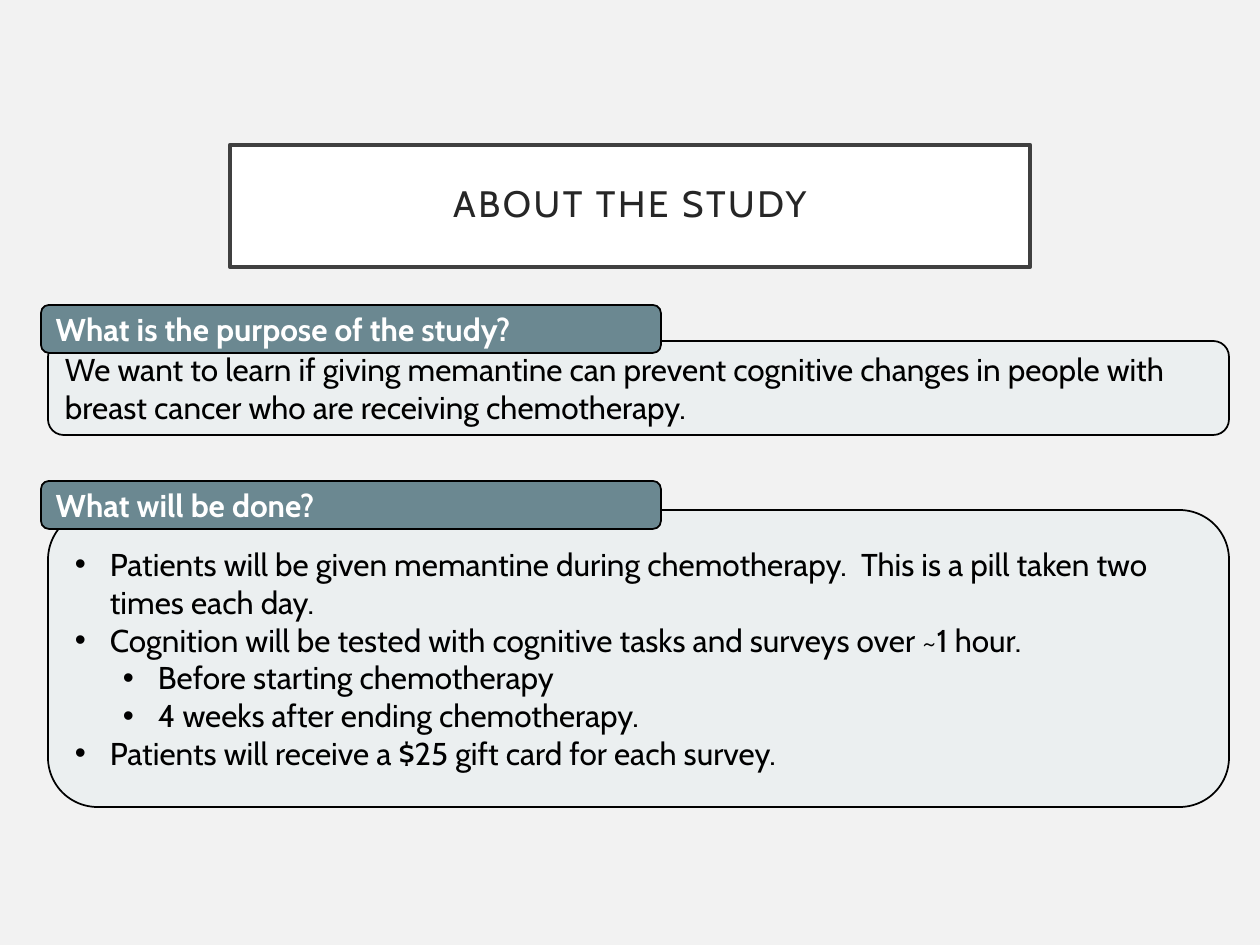
import dataclasses
import typing

import pptx
import pptx.dml.color
import pptx.enum.shapes
import pptx.enum.text
import pptx.oxml.ns
import pptx.util
from lxml import etree

PX = 914400 / 126  # EMU per px
FONT = "Cabin"
COLORS = {
    "background": "F2F2F2",
    "white": "FFFFFF",
    "title_border": "404040",
    "title_text": "262626",
    "heading": "6B8891",
    "panel": "EBEFF0",
    "black": "000000",
}
PANEL_LEFT, PANEL_WIDTH = 48, 1181
HEADING_LEFT, HEADING_WIDTH, HEADING_HEIGHT = 41, 620, 48
BULLET_HANG, LEVEL_STEP = 35, 48


@dataclasses.dataclass(frozen=True)
class Line:
    text: str
    level: typing.Optional[int] = None  # None means no bullet


@dataclasses.dataclass(frozen=True)
class Section:
    heading: str
    heading_top: int
    panel_top: int
    panel_height: int
    lines: tuple[Line, ...]


SECTIONS = (
    Section("What is the purpose of the study?", 305, 341, 94, (
        Line("We want to learn if giving memantine can prevent cognitive changes "
             "in people with breast cancer who are receiving chemotherapy."),
    )),
    Section("What will be done?", 481, 510, 297, (
        Line("Patients will be given memantine during chemotherapy.  "
             "This is a pill taken two times each day.", 0),
        Line("Cognition will be tested with cognitive tasks and surveys over ~1 hour.", 0),
        Line("Before starting chemotherapy", 1),
        Line("4 weeks after ending chemotherapy.", 1),
        Line("Patients will receive a $25 gift card for each survey.", 0),
    )),
)


def emu(px: float) -> int:
    return round(px * PX)


def rgb(name: str) -> pptx.dml.color.RGBColor:
    return pptx.dml.color.RGBColor.from_string(COLORS[name])


def add_box(slide, kind, left: int, top: int, width: int, height: int, *,
            fill: str, line: str = "black", line_width: float = 1):
    box = slide.shapes.add_shape(kind, emu(left), emu(top), emu(width), emu(height))
    box.shadow.inherit = False
    box.fill.solid()
    box.fill.fore_color.rgb = rgb(fill)
    box.line.color.rgb = rgb(line)
    box.line.width = pptx.util.Pt(line_width)
    return box


def add_bullet(paragraph, level: int) -> None:
    paragraph.level = level
    properties = paragraph._p.get_or_add_pPr()
    properties.set("marL", str(emu(BULLET_HANG + level * LEVEL_STEP)))
    properties.set("indent", str(-emu(BULLET_HANG)))
    for tag, key, value in (("a:buFont", "typeface", "Arial"), ("a:buChar", "char", "•")):
        etree.SubElement(properties, pptx.oxml.ns.qn(tag)).set(key, value)


def write_text(box, lines: typing.Sequence[Line], *, color: str, size: float = 18,
               bold: bool = False, align=pptx.enum.text.PP_ALIGN.LEFT,
               line_spacing: typing.Optional[float] = None,
               letter_spacing: float = 0, inset: typing.Optional[int] = None) -> None:
    frame = box.text_frame
    frame.word_wrap = True
    frame.vertical_anchor = pptx.enum.text.MSO_ANCHOR.MIDDLE
    if inset is not None:
        frame.margin_left = frame.margin_right = emu(inset)
        frame.margin_top = frame.margin_bottom = emu(inset)
    for index, line in enumerate(lines):
        paragraph = frame.add_paragraph() if index else frame.paragraphs[0]
        paragraph.alignment = align
        if line_spacing:
            paragraph.line_spacing = line_spacing
        if line.level is not None:
            add_bullet(paragraph, line.level)
        run = paragraph.add_run()
        run.text = line.text
        run.font.name = FONT
        run.font.size = pptx.util.Pt(size)
        run.font.bold = bold
        run.font.color.rgb = rgb(color)
        if letter_spacing:
            run._r.get_or_add_rPr().set("spc", str(round(letter_spacing * 100)))


def add_section(slide, section: Section) -> None:
    rounded = pptx.enum.shapes.MSO_SHAPE.ROUNDED_RECTANGLE
    panel = add_box(slide, rounded, PANEL_LEFT, section.panel_top,
                    PANEL_WIDTH, section.panel_height, fill="panel")
    write_text(panel, section.lines, color="black")
    heading = add_box(slide, rounded, HEADING_LEFT, section.heading_top,
                      HEADING_WIDTH, HEADING_HEIGHT, fill="heading")
    write_text(heading, [Line(section.heading)], color="white", bold=True)


def main() -> None:
    deck = pptx.Presentation()
    deck.slide_width, deck.slide_height = emu(1260), emu(945)
    slide = deck.slides.add_slide(deck.slide_layouts[6])
    slide.background.fill.solid()
    slide.background.fill.fore_color.rgb = rgb("background")

    # Title
    title = add_box(slide, pptx.enum.shapes.MSO_SHAPE.RECTANGLE, 230, 145, 800, 122,
                    fill="white", line="title_border", line_width=2.5)
    write_text(title, [Line("ABOUT THE STUDY")], color="title_text", size=21,
               align=pptx.enum.text.PP_ALIGN.CENTER, line_spacing=0.9,
               letter_spacing=1.5, inset=25)

    # Question headings over their answer panels
    for section in SECTIONS:
        add_section(slide, section)

    deck.save("out.pptx")


if __name__ == "__main__":
    main()
